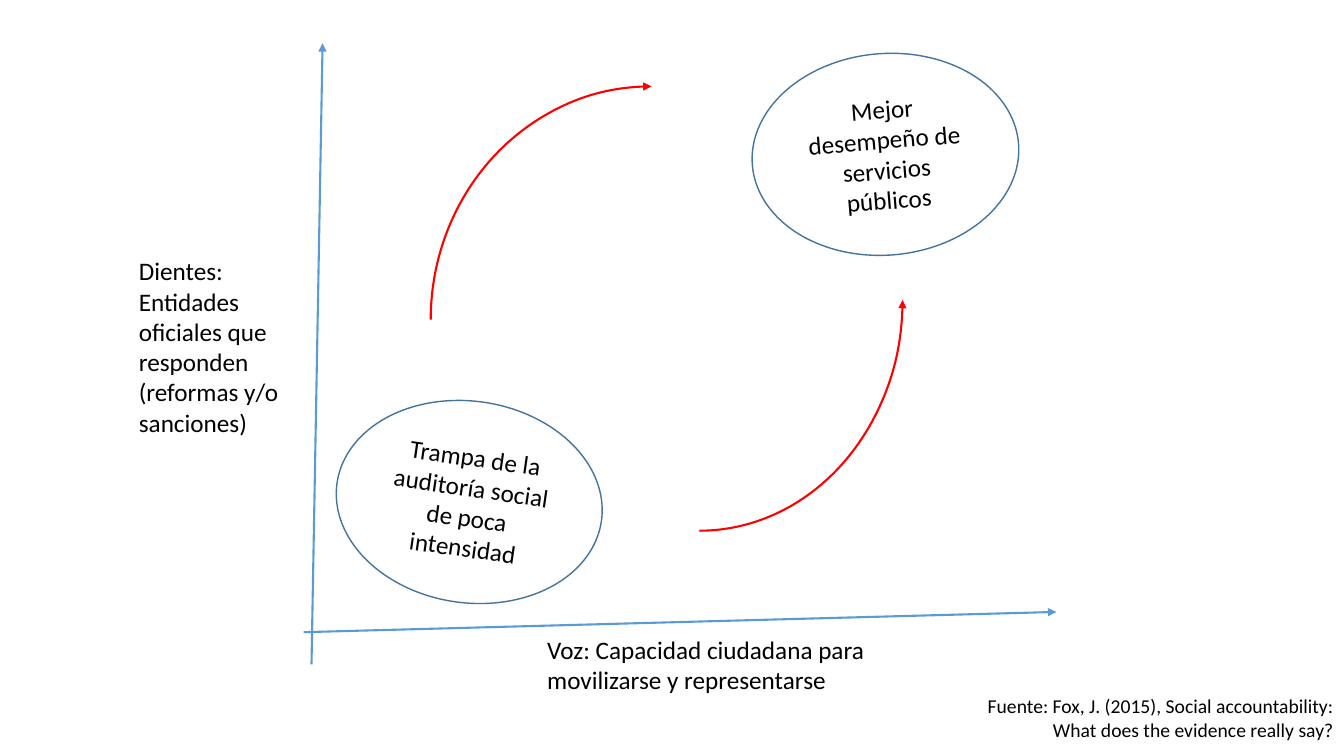
from lxml.etree import SubElement
from pptx import Presentation
from pptx.dml.color import RGBColor
from pptx.enum.shapes import MSO_CONNECTOR as Connector, MSO_SHAPE as Shape
from pptx.enum.text import MSO_ANCHOR as Anchor, MSO_AUTO_SIZE as AutoSize, PP_ALIGN as Align
from pptx.oxml.ns import qn
from pptx.util import Cm, Pt

AXIS_BLUE = "5B9BD5"
OUTLINE_BLUE = "43739E"
ARC_RED = "FF0000"
BLACK = "000000"


def color(hex_value):
    return RGBColor.from_string(hex_value)


def style_line(shape, hex_value, width, arrow_end=None):
    """Set the line; arrow_end is "headEnd" (start), "tailEnd" (finish) or None."""
    shape.line.color.rgb = color(hex_value)
    shape.line.width = Pt(width)
    if arrow_end:
        line = shape.line._get_or_add_ln()
        SubElement(line, qn(f"a:{arrow_end}"), type="triangle")


def write_text(text_frame, lines, size, align):
    text_frame.word_wrap = True
    text_frame.text = "\n".join(lines)
    for paragraph in text_frame.paragraphs:
        paragraph.alignment = align
        paragraph.font.name = "Calibri"
        paragraph.font.size = Pt(size)
        paragraph.font.color.rgb = color(BLACK)


def add_axis(slide, start, end):
    points = [Cm(value) for value in (*start, *end)]
    axis = slide.shapes.add_connector(Connector.STRAIGHT, *points)
    style_line(axis, AXIS_BLUE, 1.5, "tailEnd")
    SubElement(axis._element.spPr, qn("a:effectLst"))


def add_label(slide, box, lines, size=18, align=Align.LEFT):
    label = slide.shapes.add_textbox(*map(Cm, box))
    write_text(label.text_frame, lines, size, align)
    label.text_frame.auto_size = AutoSize.SHAPE_TO_FIT_TEXT


def add_outline(slide, kind, box, rotation):
    """Add an unfilled, rotated preset shape without a shadow."""
    shape = slide.shapes.add_shape(kind, *map(Cm, box))
    shape.rotation = rotation
    shape.shadow.inherit = False
    shape.fill.background()
    return shape


def add_ellipse(slide, left, top, rotation, text):
    ellipse = add_outline(slide, Shape.OVAL, (left, top, 6.73, 5.08), rotation)
    style_line(ellipse, OUTLINE_BLUE, 1)
    ellipse.text_frame.vertical_anchor = Anchor.MIDDLE
    write_text(ellipse.text_frame, [text], 18, Align.CENTER)


def add_arc(slide, box, rotation, arrow_end):
    arc = add_outline(slide, Shape.ARC, box, rotation)
    style_line(arc, ARC_RED, 1.5, arrow_end)


def main():
    presentation = Presentation()
    presentation.slide_width = Cm(33.87)
    presentation.slide_height = Cm(19.05)
    slide = presentation.slides.add_slide(presentation.slide_layouts[6])

    add_axis(slide, (7.65, 15.93), (26.62, 15.42))
    add_axis(slide, (7.85, 16.74), (8.13, 1.09))
    add_label(slide, (3.25, 6.32, 4.47, 4.88),
              ["Dientes:", "Entidades oficiales que responden (reformas y/o sanciones)"])
    add_label(slide, (13.54, 15.85, 8.71, 1.8),
              ["Voz: Capacidad ciudadana para movilizarse y representarse"])
    add_ellipse(slide, 8.46, 10.11, 8.2, "Trampa de la auditoría social de poca intensidad")
    add_ellipse(slide, 18.95, 1.35, 355.4, "Mejor desempeño de servicios públicos")
    add_label(slide, (24.36, 17.37, 9.5, 1.45),
              ["Fuente: Fox, J. (2015), Social accountability: What does the evidence really say?"],
              size=14, align=Align.RIGHT)
    add_arc(slide, (10.54, 2.49, 11.76, 11.13), 270, "tailEnd")
    add_arc(slide, (11.81, 2.44, 11.63, 10.24), 90, "headEnd")

    presentation.save("out.pptx")


if __name__ == "__main__":
    main()
